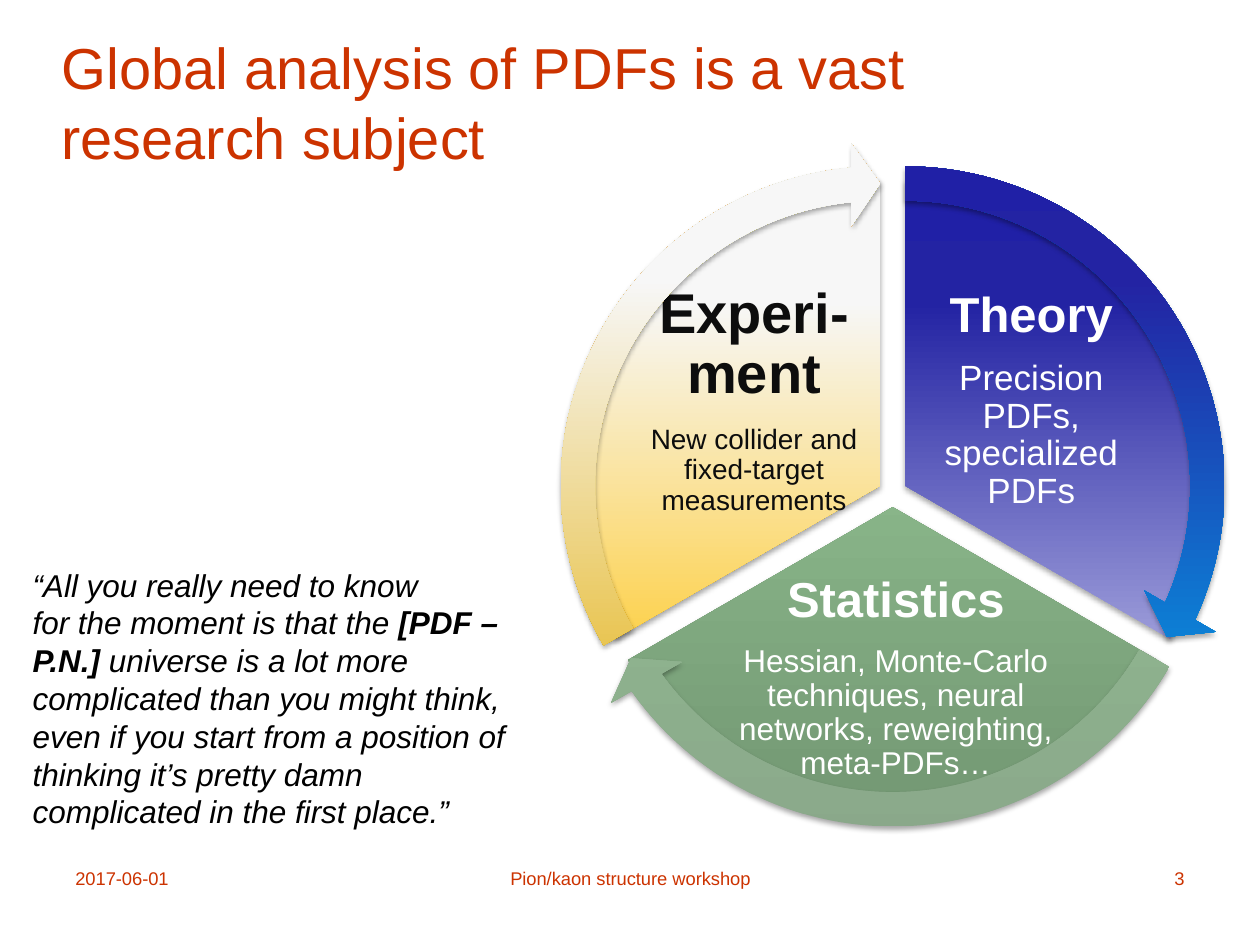
"""Build a slide with a three-part wheel on the global analysis of PDFs."""
from lxml import etree
from pptx import Presentation
from pptx.dml.color import RGBColor
from pptx.enum.shapes import MSO_SHAPE
from pptx.enum.text import MSO_ANCHOR, MSO_AUTO_SIZE, PP_ALIGN
from pptx.oxml.ns import qn
from pptx.util import Emu, Inches, Pt

PIE, ARROW = MSO_SHAPE.PIE, MSO_SHAPE.CIRCULAR_ARROW
LEFT, CENTER, RIGHT = PP_ALIGN.LEFT, PP_ALIGN.CENTER, PP_ALIGN.RIGHT
TOP, MIDDLE = MSO_ANCHOR.TOP, MSO_ANCHOR.MIDDLE
GROW = MSO_AUTO_SIZE.SHAPE_TO_FIT_TEXT

THEME = {
    "font": "Arial", "accent": "CC3300", "ink": "000000",
    "title": 33, "footer": 10.5, "quote": 18,
}
WIDTH, HEIGHT = Inches(10), Inches(7.5)
COLUMN, ROW = WIDTH / 100, HEIGHT / 100

TITLE = ["Global analysis of PDFs is a vast", "research subject"]
TITLE_AREA = (3.9, 6, 90, 9.47)
FOOTERS = [
    ("2017-06-01", LEFT, 5, 23.3),
    ("Pion/kaon structure workshop", CENTER, 34.2, 31.7),
    ("3", RIGHT, 71.7, 23.3),
]
FOOTER_TOP, FOOTER_HEIGHT = 91.07, 6.93
QUOTE = [
    [("“All you really need to know", False)],
    [("for the moment is that the ", False), ("[PDF –P.N.] ", True),
     ("universe is a lot more complicated than you might think, even if you start "
      "from a position of thinking it’s pretty damn complicated in the first place.”", False)],
]
QUOTE_AREA = (1.6, 59.2, 40.2, 29.6)

PIE_SIZE, ARROW_SIZE = 48.5, 54.5
STOPS = (0, 80, 100)
SECTORS = [
    {"name": "Theory", "detail": "Precision PDFs, specialized PDFs",
     "sizes": (28, 20), "color": "FFFFFF", "corner": (47.6, 14.3),
     "area": (73.2, 32.8, 17.3, 19.2), "angles": (162, 18), "sweep": (14.73, 161.99),
     "pie": ("D3D3F1", "2323A3", "2020A6"), "arrow": ("00B0F0", "2323A3", "2020A6")},
    {"name": "Statistics",
     "detail": "Hessian, Monte-Carlo techniques, neural networks, reweighting, meta-PDFs…",
     "sizes": (28, 18), "color": "FFFFFF", "corner": (46.6, 16),
     "area": (58.1, 63.33, 26, 16.93), "angles": (18, 90), "sweep": (86.72, 18.01),
     "pie": ("739873", "95C595", "95C795"), "arrow": ("8AA88A", "95C595", "95C795")},
    {"name": "Experi-ment", "detail": "New collider and fixed-target measurements",
     "sizes": (32, 16), "color": "0D0D0D", "corner": (45.6, 14.3),
     "area": (51.2, 32.8, 17.3, 19.2), "angles": (90, 162), "sweep": (158.73, 90),
     "pie": ("FFC000", "F7F7F7", "F8F8F8"), "arrow": ("E2AC00", "F7F7F7", "F8F8F8")},
]


def add_box(page, area, anchor=TOP, inset=None):
    left, top, width, height = area
    box = page.shapes.add_textbox(Emu(int(left * COLUMN)), Emu(int(top * ROW)),
                                  Emu(int(width * COLUMN)), Emu(int(height * ROW)))
    frame = box.text_frame
    frame.word_wrap = True
    frame.vertical_anchor = anchor
    if inset is not None:
        frame.margin_left = frame.margin_right = inset
        frame.margin_top = frame.margin_bottom = inset
    return frame


def add_paragraph(frame, index, align=LEFT):
    para = frame.add_paragraph() if index else frame.paragraphs[0]
    para.alignment = align
    return para


def add_span(para, text, size, color, bold=False, italic=False):
    span = para.add_run()
    span.text = text
    font = span.font
    font.name, font.size = THEME["font"], Pt(size)
    font.bold, font.italic = bold, italic
    font.color.rgb = RGBColor.from_string(color)


def add_child(parent, tag, **attributes):
    return etree.SubElement(parent, qn(tag), {key: str(value) for key, value in attributes.items()})


def add_wheel_part(page, kind, corner, size, adjustments, colors):
    left, top = corner
    shape = page.shapes.add_shape(kind, Emu(int(left * COLUMN)), Emu(int(top * COLUMN)),
                                  Emu(int(size * COLUMN)), Emu(int(size * COLUMN)))
    for index, value in enumerate(adjustments):
        shape.adjustments[index] = value
    shape.line.fill.background()
    shape.fill.gradient()
    shape.fill.gradient_angle = 90
    properties = shape._element.spPr
    stop_list = properties.find(".//" + qn("a:gsLst"))
    for stop in list(stop_list):
        stop_list.remove(stop)
    for position, color in zip(STOPS, colors):
        stop = add_child(stop_list, "a:gs", pos=position * 1000)
        add_child(stop, "a:srgbClr", val=color)
    shape.shadow.inherit = False
    shadow = add_child(properties.find(qn("a:effectLst")), "a:outerShdw", blurRad=Pt(3.1),
                       dist=Pt(1.8), dir=90 * 60000, rotWithShape=0)
    add_child(add_child(shadow, "a:srgbClr", val="000000"), "a:alpha", val=35000)


def add_sector_text(page, sector):
    frame = add_box(page, sector["area"], MIDDLE, Inches(0.04))
    for index, key in enumerate(("name", "detail")):
        para = add_paragraph(frame, index, CENTER)
        para.line_spacing = 0.9
        after = add_child(para._p.get_or_add_pPr(), "a:spcAft")
        add_child(after, "a:spcPct", val=35000)
        add_span(para, sector[key], sector["sizes"][index], sector["color"], bold=index == 0)


def main():
    deck = Presentation()
    deck.slide_width, deck.slide_height = WIDTH, HEIGHT
    page = deck.slides.add_slide(deck.slide_layouts[6])

    para = add_paragraph(add_box(page, TITLE_AREA, MIDDLE), 0)
    for index, line in enumerate(TITLE):
        if index:
            para.add_line_break()
        add_span(para, line, THEME["title"], THEME["accent"])

    for text, align, left, width in FOOTERS:
        frame = add_box(page, (left, FOOTER_TOP, width, FOOTER_HEIGHT))
        add_span(add_paragraph(frame, 0, align), text, THEME["footer"], THEME["accent"])

    for sector in SECTORS:
        add_wheel_part(page, PIE, sector["corner"], PIE_SIZE, sector["angles"], sector["pie"])
        add_sector_text(page, sector)
    overhang = (ARROW_SIZE - PIE_SIZE) / 2
    for sector in SECTORS:
        corner = [edge - overhang for edge in sector["corner"]]
        adjustments = (0.05, 3.28, *sector["sweep"], 0.06)
        add_wheel_part(page, ARROW, corner, ARROW_SIZE, adjustments, sector["arrow"])

    frame = add_box(page, QUOTE_AREA)
    frame.auto_size = GROW
    for index, spans in enumerate(QUOTE):
        para = add_paragraph(frame, index)
        for text, bold in spans:
            add_span(para, text, THEME["quote"], THEME["ink"], bold, italic=True)

    deck.save("out.pptx")


if __name__ == "__main__":
    main()
